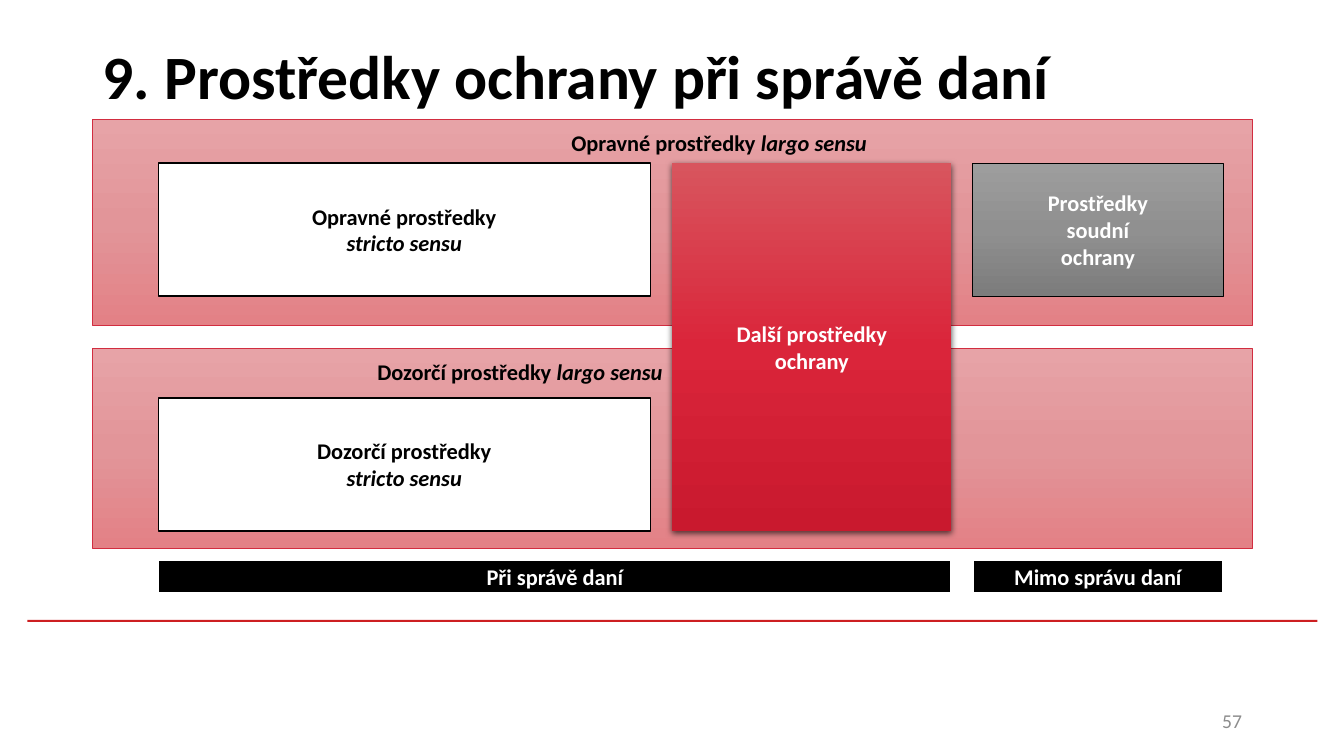
"""Build the slide on means of protection in tax administration."""
from copy import deepcopy
from dataclasses import dataclass
from typing import NamedTuple, Optional

from lxml.etree import SubElement
from pptx import Presentation
from pptx.dml.color import RGBColor
from pptx.enum.shapes import MSO_SHAPE
from pptx.enum.text import MSO_ANCHOR, PP_ALIGN
from pptx.oxml.ns import qn
from pptx.util import Cm, Pt

BLACK = RGBColor(0x00, 0x00, 0x00)
WHITE = RGBColor(0xFF, 0xFF, 0xFF)
GREY = RGBColor(0x8C, 0x8C, 0x8C)
RULE_RED = RGBColor(0xCD, 0x1F, 0x21)
BORDER_RED = RGBColor(0xD2, 0x2D, 0x40)
PINKS = (RGBColor(0xE7, 0xA3, 0xA7), RGBColor(0xE2, 0x95, 0x99), RGBColor(0xE3, 0x81, 0x86))
REDS = (RGBColor(0xD8, 0x55, 0x5E), RGBColor(0xDA, 0x25, 0x3A), RGBColor(0xC9, 0x19, 0x2E))
GREYS = (RGBColor(0x9D, 0x9D, 0x9D), RGBColor(0x90, 0x90, 0x90), RGBColor(0x7C, 0x7C, 0x7C))

BAND_X, BAND_W = 2.34, 29.21
LEFT_X, LEFT_W = 3.99, 12.4
MIDDLE_X, MIDDLE_W = 16.94, 7.04
RIGHT_X, RIGHT_W = 24.51, 6.32
UPPER_Y, LOWER_Y, BOX_H = 4.11, 10.03, 3.35
FOOT_Y, FOOT_H = 14.1, 0.84


class Run(NamedTuple):
    text: str
    italic: bool = False


@dataclass
class Box:
    x: float
    y: float
    w: float
    h: float
    fill: tuple
    lines: tuple = ()
    color: RGBColor = BLACK
    border: Optional[RGBColor] = None
    border_pt: float = 1
    indent: Optional[float] = None
    shadow: bool = False


BOXES = (
    Box(BAND_X, 8.79, BAND_W, 5.03, PINKS,
        ((Run("Dozorčí prostředky "), Run("largo sensu", True)),),
        border=BORDER_RED, border_pt=0.5, indent=7.17),
    Box(BAND_X, 3.02, BAND_W, 5.18, PINKS,
        ((Run("Opravné prostředky "), Run("largo sensu", True)),),
        border=BORDER_RED, border_pt=0.5, indent=12.06),
    Box(MIDDLE_X, UPPER_Y, MIDDLE_W, LOWER_Y + BOX_H - UPPER_Y, REDS,
        ((Run("Další prostředky"),), (Run("ochrany"),)), WHITE, shadow=True),
    Box(LEFT_X, UPPER_Y, LEFT_W, BOX_H, (WHITE,),
        ((Run("Opravné prostředky"),), (Run("stricto sensu", True),)), border=BLACK),
    Box(LEFT_X, LOWER_Y, LEFT_W, BOX_H, (WHITE,),
        ((Run("Dozorčí prostředky"),), (Run("stricto sensu", True),)), border=BLACK),
    Box(RIGHT_X, UPPER_Y, RIGHT_W, BOX_H, GREYS,
        ((Run("Prostředky"),), (Run("soudní"),), (Run("ochrany"),)), WHITE, BLACK, 0.5),
    Box(LEFT_X, FOOT_Y, MIDDLE_X + MIDDLE_W - LEFT_X, FOOT_H, (BLACK,),
        ((Run("Při správě daní"),),), WHITE, WHITE, 1.5),
    Box(RIGHT_X, FOOT_Y, RIGHT_W, FOOT_H, (BLACK,),
        ((Run("Mimo správu daní"),),), WHITE, WHITE, 1.5),
    Box(0.69, 15.62, 32.51, 0.05, (RULE_RED,)),
)


def write(sp, lines: tuple, *, size: float = 16, color: RGBColor = BLACK, bold: bool = True,
          align=PP_ALIGN.CENTER, anchor=MSO_ANCHOR.MIDDLE) -> None:
    """Write lines of runs into a shape."""
    tf = sp.text_frame
    tf.word_wrap = True
    tf.vertical_anchor = anchor
    for i, line in enumerate(lines):
        p = tf.add_paragraph() if i else tf.paragraphs[0]
        p.alignment = align
        for text, italic in line:
            r = p.add_run()
            r.text = text
            r.font.name = "Calibri"
            r.font.size = Pt(size)
            r.font.bold = bold
            r.font.italic = italic
            r.font.color.rgb = color


def paint(sp, colors: tuple) -> None:
    """Fill a shape with one colour or a downward three-stop gradient."""
    if len(colors) == 1:
        sp.fill.solid()
        sp.fill.fore_color.rgb = colors[0]
        return
    sp.fill.gradient()
    sp.fill.gradient_angle = 270
    stops = sp._element.spPr.find(qn("a:gradFill")).find(qn("a:gsLst"))
    stops.append(deepcopy(stops[-1]))
    for stop, position, color in zip(sp.fill.gradient_stops, (0, 0.5, 1), colors):
        stop.position = position
        stop.color.rgb = color


def add_shadow(sp) -> None:
    """Add a soft black shadow below a shape."""
    effects = sp._element.spPr.find(qn("a:effectLst"))
    shadow = SubElement(effects, qn("a:outerShdw"), blurRad=str(Pt(4.5)), dist=str(Pt(1.5)),
                        dir="5400000", rotWithShape="0")
    color = SubElement(shadow, qn("a:srgbClr"), val=str(BLACK))
    SubElement(color, qn("a:alpha"), val="63000")


def add_box(s, box: Box) -> None:
    """Draw one rectangle with its text."""
    sp = s.shapes.add_shape(MSO_SHAPE.RECTANGLE, Cm(box.x), Cm(box.y), Cm(box.w), Cm(box.h))
    sp.shadow.inherit = False
    paint(sp, box.fill)
    if box.border is None:
        sp.line.fill.background()
    else:
        sp.line.color.rgb = box.border
        sp.line.width = Pt(box.border_pt)
    if box.shadow:
        add_shadow(sp)
    if box.indent is None:
        write(sp, box.lines, color=box.color)
    else:
        sp.text_frame.margin_left = Cm(box.indent)
        sp.text_frame.margin_top = Cm(0.24)
        write(sp, box.lines, color=box.color, align=PP_ALIGN.LEFT, anchor=MSO_ANCHOR.TOP)


def main() -> None:
    """Build and save the slide."""
    prs = Presentation()
    prs.slide_width, prs.slide_height = Cm(33.87), Cm(19.05)
    s = prs.slides.add_slide(prs.slide_layouts[6])
    title = s.shapes.add_textbox(Cm(BAND_X), Cm(0.05), Cm(BAND_W), Cm(3.68))
    write(title, ((Run("9. Prostředky ochrany při správě daní"),),), size=44, align=PP_ALIGN.LEFT)
    number = s.shapes.add_textbox(Cm(23.93), Cm(17.65), Cm(7.62), Cm(1.02))
    write(number, ((Run("57"),),), size=14, color=GREY, bold=False, align=PP_ALIGN.RIGHT)
    for box in BOXES:
        add_box(s, box)
    prs.save("out.pptx")


if __name__ == "__main__":
    main()
